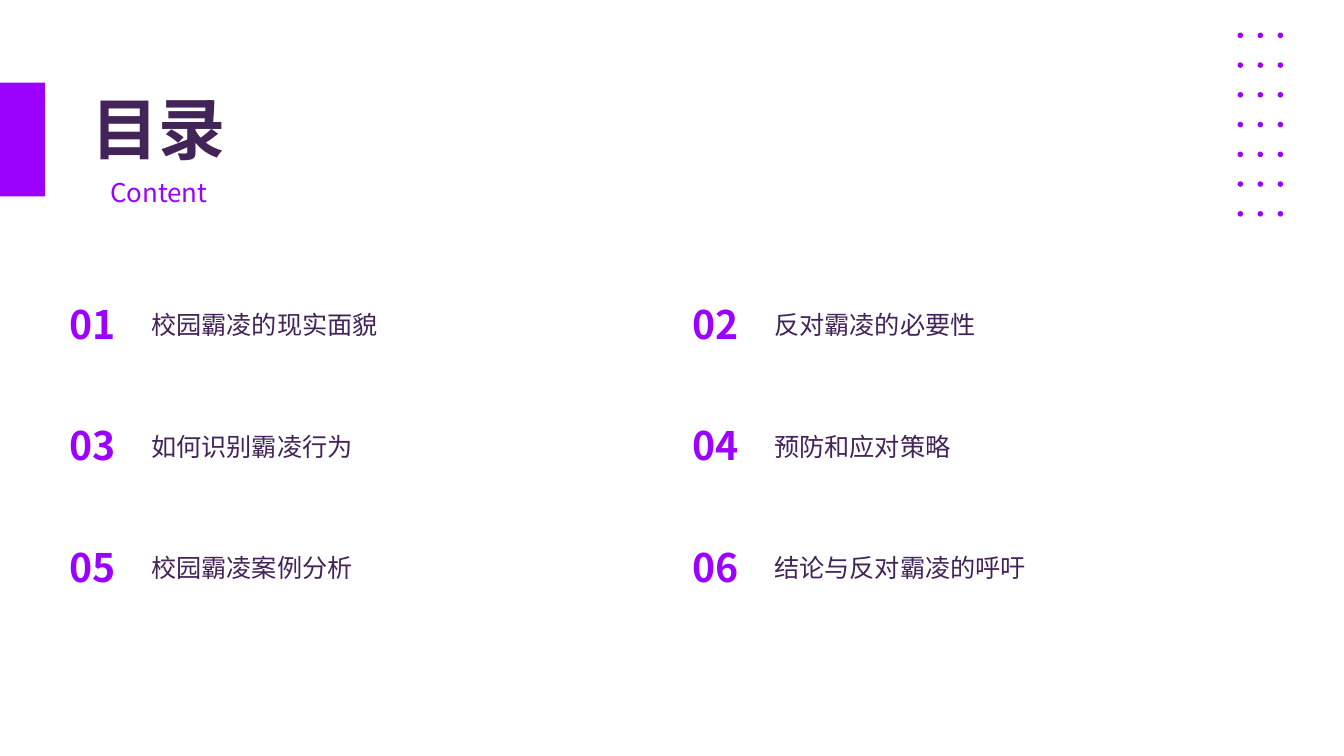
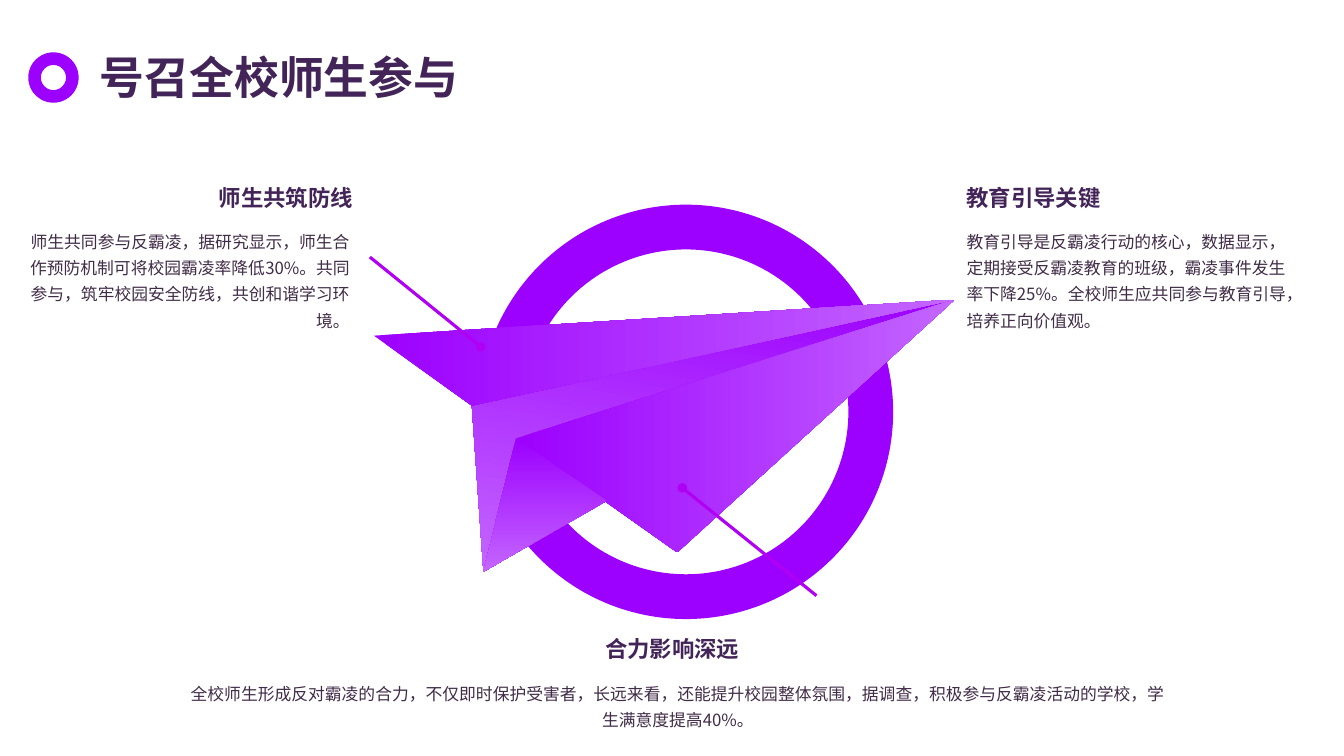
from itertools import product

from lxml.etree import SubElement
from pptx import Presentation
from pptx.dml.color import RGBColor
from pptx.enum.shapes import MSO_CONNECTOR as CONN, MSO_SHAPE as SHAPE
from pptx.enum.text import MSO_ANCHOR as ANCHOR, MSO_AUTO_SIZE as AUTO, PP_ALIGN as ALIGN
from pptx.oxml.ns import qn
from pptx.util import Pt

FONT = "Noto Sans CJK SC"
COLORS = {
    "purple": "9C00FF",
    "lilac": "C466FF",
    "callout": "B000F4",
    "heading": "432458",
    "body": "412C48",
}
STYLES = {
    "contents": {"size": Pt(48), "bold": True, "color": "heading"},
    "subtitle": {"size": Pt(18.5), "bold": False, "color": "purple"},
    "number": {"size": Pt(28), "bold": True, "color": "purple"},
    "topic": {"size": Pt(18), "bold": False, "color": "heading"},
    "title": {"size": Pt(32), "bold": True, "color": "heading"},
    "heading": {"size": Pt(16), "bold": True, "color": "heading"},
    "body": {"size": Pt(12), "bold": False, "color": "body"},
}
PARAGRAPHS = {
    "title": {"line_spacing": 1.2},
    "body": {"line_spacing": 1.3, "space_after": Pt(3)},
}

TOPICS = [
    "校园霸凌的现实面貌",
    "反对霸凌的必要性",
    "如何识别霸凌行为",
    "预防和应对策略",
    "校园霸凌案例分析",
    "结论与反对霸凌的呼吁",
]
POINTS = [
    ("师生共筑防线", (49, 124.6, 210.2, 33.1),
     "师生共同参与反霸凌，据研究显示，师生合作预防机制可将校园霸凌率降低30%。"
     "共同参与，筑牢校园安全防线，共创和谐学习环境。",
     (12.2, 157.7, 244.8, 195.8), ALIGN.RIGHT),
    ("教育引导关键", (683.3, 124.6, 218.9, 33.1),
     "教育引导是反霸凌行动的核心，数据显示，定期接受反霸凌教育的班级，霸凌事件发生率下降25%。"
     "全校师生应共同参与教育引导，培养正向价值观。",
     (683.3, 157.7, 245.5, 195.8), ALIGN.LEFT),
    ("合力影响深远", (382.3, 446.4, 195.8, 33.1),
     "全校师生形成反对霸凌的合力，不仅即时保护受害者，长远来看，还能提升校园整体氛围，"
     "据调查，积极参与反霸凌活动的学校，学生满意度提高40%。",
     (126, 480.2, 716.4, 49), ALIGN.CENTER),
]

NOSE = (682, 214)
LEFT_WING = (267.1, 239.8)
LEFT_FOLD = (337, 289.8)
KEEL = (345.3, 408.4)
RIGHT_FOLD = (368.6, 313.2)
RIGHT_WING = (483.8, 394.6)
KEEL_EDGE = (433.4, 357.8)
PLANE = [
    ((LEFT_FOLD, KEEL, NOSE), 260),
    ((RIGHT_FOLD, RIGHT_WING, NOSE), 0),
    ((LEFT_WING, LEFT_FOLD, NOSE), 0),
    ((KEEL, RIGHT_FOLD, KEEL_EDGE), 270),
]
CALLOUTS = [(264.2, 183.6, 343.4, 247.7), (583.2, 425.5, 487.4, 348.5)]


def rgb(name):
    return RGBColor.from_string(COLORS[name])


def pts(values):
    return [Pt(v) for v in values]


def write(tf, text, style, align, anchor):
    for name, value in {"word_wrap": True, "auto_size": AUTO.NONE,
                        "vertical_anchor": anchor}.items():
        setattr(tf, name, value)
    p = tf.paragraphs[0]
    p.alignment = align
    for name, value in PARAGRAPHS.get(style, {}).items():
        setattr(p, name, value)
    r = p.add_run()
    r.text = text
    r.font.name = FONT
    for name, value in STYLES[style].items():
        if name == "color":
            r.font.color.rgb = rgb(value)
        else:
            setattr(r.font, name, value)
    SubElement(r.font._element, qn("a:ea"), typeface=FONT)


def add_text(s, box, text, style, align=ALIGN.LEFT, anchor=ANCHOR.MIDDLE):
    sp = s.shapes.add_textbox(*pts(box))
    write(sp.text_frame, text, style, align, anchor)


def set_title(s, box, text, style, align=ALIGN.LEFT, anchor=ANCHOR.MIDDLE):
    sp = s.shapes.title
    sp.left, sp.top, sp.width, sp.height = pts(box)
    write(sp.text_frame, text, style, align, anchor)


def add_solid(s, kind, box, adjustment=None):
    sp = s.shapes.add_shape(kind, *pts(box))
    sp.shadow.inherit = False
    sp.fill.solid()
    sp.fill.fore_color.rgb = rgb("purple")
    sp.line.fill.background()
    if adjustment is not None:
        sp.adjustments[0] = adjustment


def add_facet(s, corners, angle):
    start, *rest = [pts(corner) for corner in corners]
    builder = s.shapes.build_freeform(*start)
    builder.add_line_segments(rest, close=True)
    sp = builder.convert_to_shape()
    sp.shadow.inherit = False
    sp.line.fill.background()
    sp.fill.gradient()
    sp.fill.gradient_angle = angle
    for stop, name in zip(sp.fill.gradient_stops, ("purple", "lilac")):
        stop.color.rgb = rgb(name)


def add_callout(s, ends):
    c = s.shapes.add_connector(CONN.STRAIGHT, *pts(ends))
    c.line.color.rgb = rgb("callout")
    c.line.width = Pt(2.25)
    SubElement(c.line._get_or_add_ln(), qn("a:tailEnd"), type="oval")
    SubElement(c._element.spPr, qn("a:effectLst"))


def add_topic(s, index, topic):
    row, col = divmod(index, 2)
    x, y = 42.5 + col * 445, 206.6 + row * 86.8
    add_text(s, (x, y + 3, 50, 43.2), f"{index + 1:02}", "number")
    add_text(s, (x + 58.3, y, 358.6, 50.4), topic, "topic")


def add_dots(s):
    for row, col in product(range(7), range(3)):
        add_solid(s, SHAPE.OVAL, (884 + col * 14.3, 23.3 + row * 21.25, 3.9, 3.9))


def contents_slide(s):
    set_title(s, (53.3, 59, 120.2, 59), "目录", "contents", ALIGN.CENTER, ANCHOR.TOP)
    add_text(s, (53.3, 122.4, 120.2, 27.4), "Content", "subtitle", ALIGN.CENTER, ANCHOR.TOP)
    add_solid(s, SHAPE.RECTANGLE, (0, 59, 32, 81.4))
    for index, topic in enumerate(TOPICS):
        add_topic(s, index, topic)
    add_dots(s)


def appeal_slide(s):
    set_title(s, (64.1, 22.3, 743.8, 56.9), "号召全校师生参与", "title")
    add_solid(s, SHAPE.DONUT, (20.2, 37.4, 36, 36), 0.25)
    add_solid(s, SHAPE.DONUT, (342, 146.2, 296, 296), 0.108)
    for corners, angle in PLANE:
        add_facet(s, corners, angle)
    for ends in CALLOUTS:
        add_callout(s, ends)
    for heading, heading_box, body, body_box, align in POINTS:
        add_text(s, heading_box, heading, "heading", align)
        add_text(s, body_box, body, "body", align, ANCHOR.TOP)


def main():
    prs = Presentation()
    prs.slide_width, prs.slide_height = Pt(960), Pt(540)
    title_only = prs.slide_layouts[5]
    for build in (contents_slide, appeal_slide):
        build(prs.slides.add_slide(title_only))
    prs.save("out.pptx")


if __name__ == "__main__":
    main()
